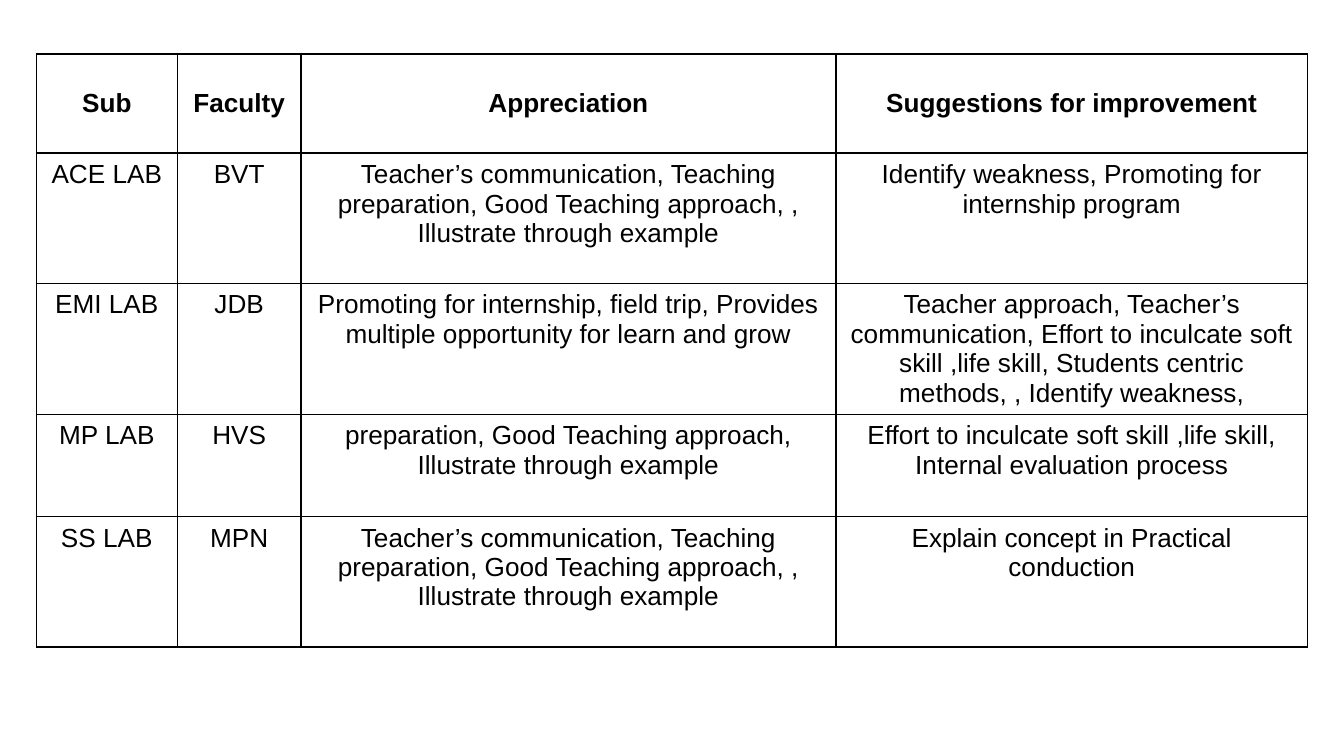
from typing import NamedTuple

from lxml import etree
from pptx import Presentation
from pptx.dml.color import RGBColor
from pptx.enum import text
from pptx.oxml import ns
from pptx.util import Inches, Pt

BLACK = "000000"
BORDER_WIDTH = Pt(1)
SLIDE_WIDTH = 10
SLIDE_HEIGHT = SLIDE_WIDTH * 9 / 16


class Feedback(NamedTuple):
    subject: str
    faculty: str
    appreciation: str
    suggestions: str


class Row(NamedTuple):
    entry: Feedback
    height: float


COLUMN_WIDTHS = (1.05, 0.92, 3.98, 3.51)
TEACHING_PRAISE = (
    "Teacher’s communication, Teaching preparation, Good Teaching approach, , "
    "Illustrate through example"
)
ROWS = (
    Row(Feedback("Sub", "Faculty", "Appreciation", "Suggestions for improvement"), 0.74),
    Row(Feedback("ACE LAB", "BVT", TEACHING_PRAISE,
                 "Identify weakness, Promoting for internship program"), 0.97),
    Row(Feedback("EMI LAB", "JDB",
                 "Promoting for internship, field trip, Provides multiple opportunity "
                 "for learn and grow",
                 "Teacher approach, Teacher’s communication, Effort to inculcate soft "
                 "skill ,life skill, Students centric methods, , Identify weakness,"), 0.97),
    Row(Feedback("MP LAB", "HVS",
                 "preparation, Good Teaching approach, Illustrate through example",
                 "Effort to inculcate soft skill ,life skill, Internal evaluation process"), 0.76),
    Row(Feedback("SS LAB", "MPN", TEACHING_PRAISE,
                 "Explain concept in Practical conduction"), 0.97),
)


def rgb(hex_code: str) -> RGBColor:
    return RGBColor.from_string(hex_code)


def add_borders(cell) -> None:
    properties = cell._tc.get_or_add_tcPr()
    for position, side in enumerate(("lnL", "lnR", "lnT", "lnB")):
        line = etree.Element(ns.qn(f"a:{side}"), w=str(BORDER_WIDTH))
        fill = etree.SubElement(line, ns.qn("a:solidFill"))
        etree.SubElement(fill, ns.qn("a:srgbClr"), val=BLACK)
        properties.insert(position, line)  # borders must precede the cell fill


def fill_cell(cell, wording: str, is_header: bool) -> None:
    cell.text = wording
    cell.fill.background()
    cell.vertical_anchor = text.MSO_ANCHOR.MIDDLE if is_header else text.MSO_ANCHOR.TOP
    paragraph = cell.text_frame.paragraphs[0]
    paragraph.alignment = text.PP_ALIGN.CENTER
    font = paragraph.font
    font.name = "Arial"
    font.size = Pt(14)
    font.bold = is_header
    font.color.rgb = rgb(BLACK)
    add_borders(cell)


def add_feedback_table(slide) -> None:
    table = slide.shapes.add_table(
        len(ROWS), len(COLUMN_WIDTHS), Inches(0.27), Inches(0.4),
        Inches(sum(COLUMN_WIDTHS)), Inches(sum(row.height for row in ROWS)),
    ).table
    table.first_row = False
    table.horz_banding = False
    for column, width in zip(table.columns, COLUMN_WIDTHS):
        column.width = Inches(width)
    for index, row in enumerate(ROWS):
        table.rows[index].height = Inches(row.height)
        for cell, wording in zip(table.rows[index].cells, row.entry):
            fill_cell(cell, wording, is_header=index == 0)


def main() -> None:
    deck = Presentation()
    deck.slide_width, deck.slide_height = Inches(SLIDE_WIDTH), Inches(SLIDE_HEIGHT)
    blank_layout = deck.slide_layouts[6]
    add_feedback_table(deck.slides.add_slide(blank_layout))
    deck.save("out.pptx")


if __name__ == "__main__":
    main()
